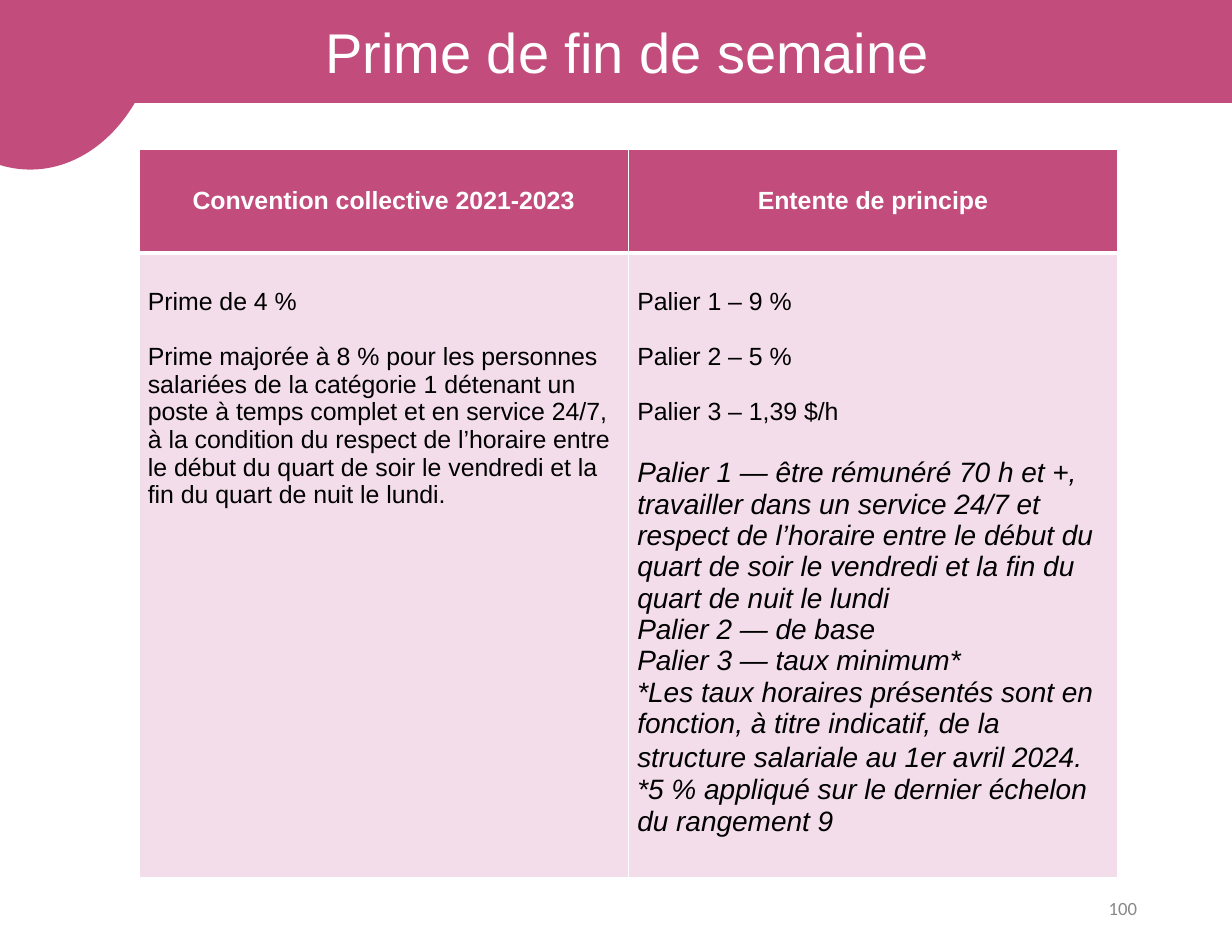
from dataclasses import dataclass

from lxml import etree
from pptx import Presentation
from pptx.dml.color import RGBColor
from pptx.enum.shapes import MSO_SHAPE
from pptx.enum.text import MSO_ANCHOR, PP_ALIGN
from pptx.oxml.ns import qn
from pptx.util import Inches, Pt

ROUND, OVAL = MSO_SHAPE.ROUNDED_RECTANGLE, MSO_SHAPE.OVAL
MIDDLE, TOP = MSO_ANCHOR.MIDDLE, MSO_ANCHOR.TOP
LEFT, CENTER, RIGHT = PP_ALIGN.LEFT, PP_ALIGN.CENTER, PP_ALIGN.RIGHT
COLORS = {"rose": "C24C7B", "pale": "F3DDEA", "white": "FFFFFF",
          "black": "000000", "gray": "888888"}
GAP, WIDE = 17.8, 20.1


@dataclass
class Para:
    text: str
    size: float = 16
    color: str = "black"
    align: PP_ALIGN = LEFT
    font: str = "Arial"
    bold: bool = False
    italic: bool = False
    before: float = 0
    tail: float = 0  # size of an upright space that ends the paragraph


def rgb(name: str) -> RGBColor:
    return RGBColor.from_string(COLORS[name])


def write(frame, paras: list[Para]) -> None:
    frame.word_wrap = True
    for i, item in enumerate(paras):
        para = frame.paragraphs[0] if i == 0 else frame.add_paragraph()
        para.alignment = item.align
        para.space_before = Pt(item.before)
        font = para.font
        font.name, font.size = item.font, Pt(item.size)
        font.bold, font.italic = item.bold, item.italic
        font.color.rgb = rgb(item.color)
        para.add_run().text = item.text
        if item.tail:
            end = para.add_run()
            end.text = " "
            end.font.size, end.font.italic = Pt(item.tail), False


def add_form(slide, kind: MSO_SHAPE, *box: float):
    form = slide.shapes.add_shape(kind, *map(Inches, box))
    form.shadow.inherit = False
    form.fill.solid()
    form.fill.fore_color.rgb = form.line.color.rgb = rgb("rose")
    form.line.width = Pt(2)
    return form


def set_edges(cell, base: float) -> None:
    """Draw white borders, with the bottom one base points wide."""
    props = cell._tc.get_or_add_tcPr()
    for i, (side, width) in enumerate(
            {"lnL": 1, "lnR": 1, "lnT": 1, "lnB": base}.items()):
        line = etree.Element(qn(f"a:{side}"), w=str(Pt(width)))
        fill = etree.SubElement(line, qn("a:solidFill"))
        etree.SubElement(fill, qn("a:srgbClr"), val=COLORS["white"])
        props.insert(i, line)


def fill_cell(cell, paras: list[Para], color: str, anchor: MSO_ANCHOR,
              top: float, base: float) -> None:
    cell.fill.solid()
    cell.fill.fore_color.rgb = rgb(color)
    cell.vertical_anchor = anchor
    cell.margin_left = cell.margin_right = Inches(0.08)
    cell.margin_top, cell.margin_bottom = Inches(top), Inches(0.06)
    write(cell.text_frame, paras)
    set_edges(cell, base)


def head(text: str) -> list[Para]:
    return [Para(text, color="white", align=CENTER, bold=True)]


def note(text: str, before: float = 0, tail: float = 0) -> Para:
    return Para(text, 18, italic=True, before=before, tail=tail)


HEADS = [head("Convention collective 2021-2023"), head("Entente de principe")]
BODIES = [
    [Para("Prime de 4 %"),
     Para("Prime majorée à 8 % pour les personnes salariées de la "
          "catégorie 1 détenant un poste à temps complet et en service 24/7, "
          "à la condition du respect de l’horaire entre le début du quart de "
          "soir le vendredi et la fin du quart de nuit le lundi.", before=GAP)],
    [Para("Palier 1 – 9 %"),
     Para("Palier 2 – 5 %", before=GAP),
     Para("Palier 3 – 1,39 $/h", before=GAP),
     note("Palier 1 — être rémunéré 70 h et +, travailler dans un "
          "service 24/7 et respect de l’horaire entre le début du quart de "
          "soir le vendredi et la fin du quart de nuit le lundi", WIDE),
     note("Palier 2 — de base"),
     note("Palier 3 — taux minimum*"),
     note("*Les taux horaires présentés sont en fonction, à titre indicatif, "
          "de la structure salariale au 1er avril 2024.", tail=20),
     note("*5 % appliqué sur le dernier échelon du rangement 9")],
]


def main() -> None:
    deck = Presentation()
    deck.slide_width, deck.slide_height = Inches(11), Inches(8.5)
    slide = deck.slides.add_slide(deck.slide_layouts[6])

    banner = add_form(slide, ROUND, 0, 0, 11.2, 0.91)
    banner.adjustments[0] = 0
    banner.text_frame.vertical_anchor = MIDDLE
    write(banner.text_frame,
          [Para("Prime de fin de semaine", 36, "white", CENTER)])
    add_form(slide, OVAL, -0.89, -1.5, 2.32, 3)

    number = slide.shapes.add_textbox(
        *map(Inches, (7.77, 7.88, 2.48, 0.45))).text_frame
    number.vertical_anchor = MIDDLE
    write(number, [Para("100", 12, "gray", RIGHT, "Calibri")])

    table = slide.shapes.add_table(
        2, 2, *map(Inches, (1.24, 1.33, 8.74, 6.31))).table
    table.horz_banding = False
    for row, height in zip(table.rows, (0.93, 5.38)):
        row.height = Inches(height)
    for col, (title, body) in enumerate(zip(HEADS, BODIES)):
        table.columns[col].width = Inches(4.37)
        fill_cell(table.cell(0, col), title, "rose", MIDDLE, 0.06, 3)
        fill_cell(table.cell(1, col), body, "pale", TOP, 0.31, 1)

    deck.save("out.pptx")


if __name__ == "__main__":
    main()
